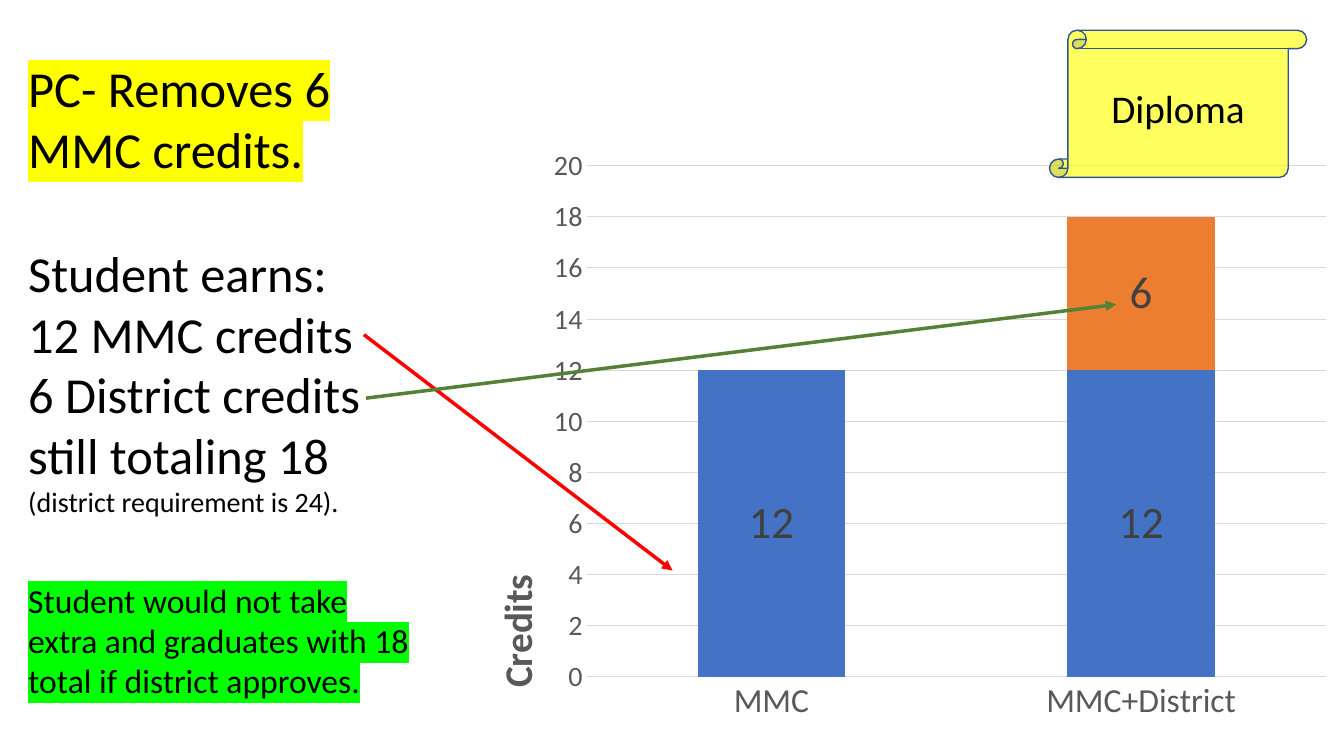
from dataclasses import dataclass

from lxml.etree import SubElement
from pptx import Presentation
from pptx.chart.data import CategoryChartData
from pptx.dml.color import RGBColor
from pptx.enum.chart import XL_CHART_TYPE as ChartType, XL_LABEL_POSITION as LabelPosition
from pptx.enum.chart import XL_TICK_MARK as TickMark
from pptx.enum.shapes import MSO_CONNECTOR as Connector, MSO_SHAPE as Shape
from pptx.enum.text import MSO_ANCHOR as Anchor, MSO_AUTO_SIZE as AutoSize, PP_ALIGN as Align
from pptx.oxml.ns import qn
from pptx.util import Inches, Pt

SLIDE_WIDTH, SLIDE_HEIGHT = Inches(13.33), Inches(7.5)


@dataclass(frozen=True)
class Theme:
    """Colours and type sizes of the slide."""
    font: str = "Calibri"
    ink: str = "000000"
    axis: str = "595959"
    label: str = "404040"
    grid: str = "D9D9D9"
    mmc: str = "4472C4"
    district: str = "ED7D31"
    yellow: str = "FFFF00"
    lime: str = "00FF00"
    red: str = "FF0000"
    green: str = "548235"
    scroll_line: str = "325491"
    statement: int = 36
    value: int = 32
    heading: int = 28
    category: int = 24
    small: int = 20


THEME = Theme()


@dataclass(frozen=True)
class Box:
    """An area given in percent of the slide's size."""
    left: float
    top: float
    width: float
    height: float

    def inner(self, left, top, width, height):
        """Return the area at the given shares of this one."""
        return Box(self.left + left * self.width, self.top + top * self.height,
                   width * self.width, height * self.height)

    def frame(self):
        """Return left, top, width and height as slide lengths."""
        return (*point(self.left, self.top), *point(self.width, self.height))


def point(x, y):
    """Turn percentages of the slide into lengths."""
    return int(SLIDE_WIDTH * x / 100), int(SLIDE_HEIGHT * y / 100)


def color(value):
    """Turn RRGGBB into a colour."""
    return RGBColor.from_string(value)


def format_font(font, size, ink):
    """Set the typeface, size and colour of a font."""
    font.name, font.size = THEME.font, Pt(size)
    font.color.rgb = color(ink)


def write(paragraph, text, size=THEME.statement, ink=THEME.ink, highlight=None,
          align=Align.LEFT, before=0):
    """Add a formatted run of text to a paragraph."""
    paragraph.alignment, paragraph.space_before = align, Pt(before)
    paragraph.line_spacing = 1.0
    run = paragraph.add_run()
    run.text = text
    format_font(run.font, size, ink)
    if highlight:
        properties = run.font.fill and run._r.get_or_add_rPr()
        mark = SubElement(properties, qn("a:highlight"))
        SubElement(mark, qn("a:srgbClr"), val=highlight)
        properties.find(qn("a:solidFill")).addnext(mark)


def place_text(shape, box):
    """Move a text shape to a box and return its plain text frame."""
    shape.left, shape.top, shape.width, shape.height = box.frame()
    frame = shape.text_frame
    frame.word_wrap, frame.auto_size = True, AutoSize.NONE
    frame.vertical_anchor = Anchor.TOP
    return frame


def add_statement(slide, box):
    """Fill the title and body with the credit explanation."""
    title = place_text(slide.shapes.title, box.inner(0, 0, 1, 0.28))
    write(title.paragraphs[0], "PC- Removes 6 MMC credits.", highlight=THEME.yellow)
    body = place_text(slide.placeholders[1], box.inner(0, 0.28, 1, 0.72))
    lines = [
        [("Student earns:", {})],
        [("12 MMC credits", {})],
        [("6 District credits still totaling 18 ", {}),
         ("(district requirement is 24).", {"size": THEME.small})],
        [("Student would not take extra and graduates with 18 total if district approves.",
          {"size": THEME.category, "highlight": THEME.lime, "before": 44})],
    ]
    for index, runs in enumerate(lines):
        paragraph = body.add_paragraph() if index else body.paragraphs[0]
        for text, options in runs:
            write(paragraph, text, **options)
        properties = paragraph._p.get_or_add_pPr()
        properties.set("marL", "0")
        properties.set("indent", "0")
        SubElement(properties, qn("a:buNone"))


def set_layout(element, index, **shares):
    """Give a chart part a manual layout in shares of the chart."""
    for old in element.findall(qn("c:layout")):
        element.remove(old)
    layout = SubElement(element, qn("c:layout"))
    element.insert(index, layout)
    manual = SubElement(layout, qn("c:manualLayout"))
    if "w" in shares:
        SubElement(manual, qn("c:layoutTarget"), val="inner")
    for axis in "xy":
        SubElement(manual, qn(f"c:{axis}Mode"), val="edge")
    for name, share in shares.items():
        SubElement(manual, qn(f"c:{name}"), val=str(share))


def format_axes(chart):
    """Format both axes and the title of the value axis."""
    for axis, size in ((chart.category_axis, THEME.category), (chart.value_axis, THEME.small)):
        axis.major_tick_mark = axis.minor_tick_mark = TickMark.NONE
        format_font(axis.tick_labels.font, size, THEME.axis)
    values = chart.value_axis
    values.minimum_scale, values.maximum_scale, values.major_unit = 0, 20, 2
    values.format.line.fill.background()
    for line in (chart.category_axis.format.line, values.major_gridlines.format.line):
        line.color.rgb, line.width = color(THEME.grid), Pt(0.75)
    write(values.axis_title.text_frame.paragraphs[0], "Credits", size=THEME.heading,
          ink=THEME.axis, align=Align.CENTER)
    title = chart.element.xpath(".//c:valAx/c:title")[0]
    turned = title.xpath(".//a:bodyPr")[0]
    turned.set("rot", "-5400000")
    turned.set("vert", "horz")
    set_layout(title, 1, x=0.04, y=0.72)


def add_credit_chart(slide, box):
    """Add the stacked columns of credits."""
    data = CategoryChartData()
    data.categories = ["MMC", "MMC+District"]
    data.add_series("Series 1", (12, 12))
    data.add_series("Series 2", (0, 6))
    chart = slide.shapes.add_chart(ChartType.COLUMN_STACKED, *box.frame(), data).chart
    format_font(chart.font, 10, THEME.ink)
    chart.has_title = chart.has_legend = False
    plot = chart.plots[0]
    plot.gap_width, plot.overlap, plot.vary_by_categories = 150, 100, False
    for series, fill in zip(plot.series, (THEME.mmc, THEME.district)):
        series.format.fill.solid()
        series.format.fill.fore_color.rgb = color(fill)
        labels = series.data_labels
        labels.show_value, labels.position = True, LabelPosition.CENTER
        labels.number_format, labels.number_format_is_linked = "0;;", False
        format_font(labels.font, THEME.value, THEME.label)
    format_axes(chart)
    set_layout(chart.element.xpath(".//c:plotArea")[0], 0, x=0.155, y=0.048, w=0.825, h=0.855)


def add_arrow(slide, start, end, ink):
    """Draw an arrow between two points given in percent."""
    arrow = slide.shapes.add_connector(Connector.STRAIGHT, *point(*start), *point(*end))
    arrow.line.color.rgb, arrow.line.width = color(ink), Pt(2.5)
    SubElement(arrow.line._get_or_add_ln(), qn("a:tailEnd"), type="triangle")
    SubElement(arrow._element.spPr, qn("a:effectLst"))


def add_diploma(slide, box):
    """Add the translucent scroll and its label."""
    scroll = slide.shapes.add_shape(Shape.VERTICAL_SCROLL, *box.frame())
    scroll.shadow.inherit = False
    scroll.fill.solid()
    scroll.fill.fore_color.rgb = color(THEME.yellow)
    tint = scroll._element.spPr.find(qn("a:solidFill"))[0]
    SubElement(tint, qn("a:alpha"), val="63000")
    scroll.line.color.rgb, scroll.line.width = color(THEME.scroll_line), Pt(1)
    area = box.inner(0.125, 0.335, 0.75, 0.39)
    label = place_text(slide.shapes.add_textbox(*area.frame()), area)
    write(label.paragraphs[0], "Diploma", size=THEME.heading, align=Align.CENTER)


def main():
    """Build and save the slide."""
    presentation = Presentation()
    presentation.slide_width, presentation.slide_height = SLIDE_WIDTH, SLIDE_HEIGHT
    slide = presentation.slides.add_slide(presentation.slide_layouts[1])
    add_credit_chart(slide, Box(33.31, 18.13, 66.69, 79.07))
    add_statement(slide, Box(1.35, 6.93, 30.23, 87.47))
    add_arrow(slide, (27.08, 44.27), (50.04, 75.47), THEME.red)
    add_arrow(slide, (27.23, 52.67), (83.05, 40.27), THEME.green)
    add_diploma(slide, Box(78.09, 4, 19.13, 19.47))
    presentation.save("out.pptx")


if __name__ == "__main__":
    main()
